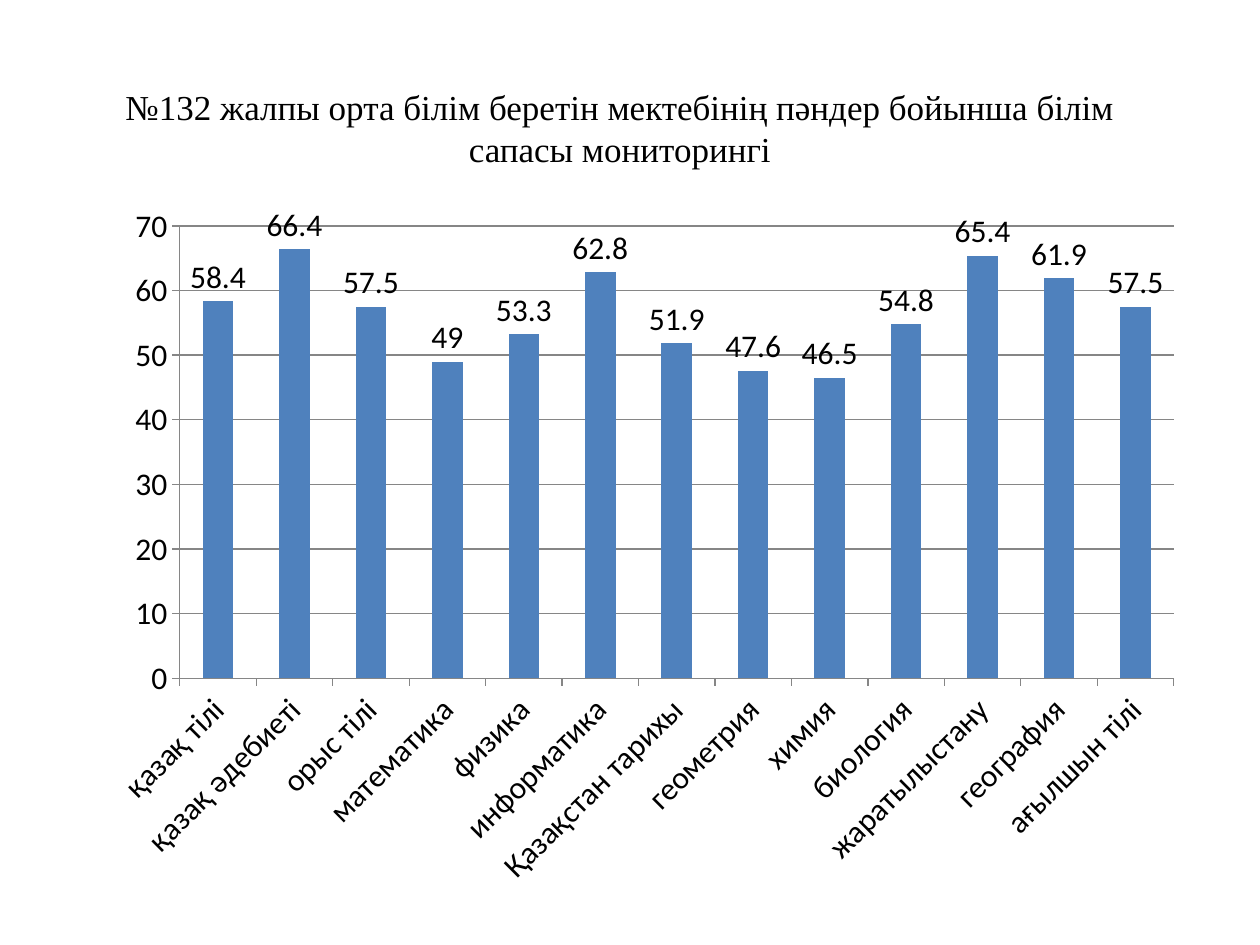
from pptx import Presentation
from pptx.chart.data import CategoryChartData as ChartData
from pptx.dml.color import RGBColor
from pptx.enum.chart import XL_CHART_TYPE as Kind, XL_LABEL_POSITION as Pos
from pptx.enum.chart import XL_TICK_MARK as Tick
from pptx.enum.text import MSO_ANCHOR as Anchor, PP_ALIGN as Align
from pptx.util import Inches, Pt

# Content
TITLE = "№132 жалпы орта білім беретін мектебінің пәндер бойынша білім сапасы мониторингі"
SCORES = [
    ("қазақ тілі", 58.4),
    ("қазақ әдебиеті", 66.4),
    ("орыс тілі", 57.5),
    ("математика", 49),
    ("физика", 53.3),
    ("информатика", 62.8),
    ("Қазақстан тарихы", 51.9),
    ("геометрия", 47.6),
    ("химия", 46.5),
    ("биология", 54.8),
    ("жаратылыстану", 65.4),
    ("география", 61.9),
    ("ағылшын тілі", 57.5),
]

BLACK = RGBColor(0x00, 0x00, 0x00)
BLUE = RGBColor(0x4F, 0x81, 0xBD)
GRAY = RGBColor(0x86, 0x86, 0x86)


def style(font, size, name, color=BLACK):
    font.size, font.name, font.bold = Pt(size), name, False
    font.color.rgb = color


def put_text(shape, text, size=20, name="Times New Roman", align=Align.CENTER):
    frame = shape.text_frame
    frame.word_wrap = True
    frame.vertical_anchor = Anchor.MIDDLE
    para = frame.paragraphs[0]
    para.alignment = align
    run = para.add_run()
    run.text = text
    style(run.font, size, name)


def add_scores(slide):
    data = ChartData()
    data.categories = [name for name, _ in SCORES]
    data.add_series("Series 1", [score for _, score in SCORES])
    box = [Inches(n) for n in (0.75, 1.53, 8.74, 5.61)]
    chart = slide.shapes.add_chart(Kind.COLUMN_CLUSTERED, *box, data).chart
    chart.has_legend = chart.has_title = False
    style(chart.font, 18, "Calibri")

    # Columns and their labels
    plot = chart.plots[0]
    plot.gap_width = 150
    plot.vary_by_categories = False
    fill = plot.series[0].format.fill
    fill.solid()
    fill.fore_color.rgb = BLUE
    plot.has_data_labels = True
    plot.data_labels.show_value = True
    plot.data_labels.position = Pos.OUTSIDE_END

    # Axes and grid
    values = chart.value_axis
    values.minimum_scale, values.maximum_scale, values.major_unit = 0, 70, 10
    values.has_major_gridlines = True
    for axis in (chart.category_axis, values):
        axis.major_tick_mark = Tick.OUTSIDE
        axis.minor_tick_mark = Tick.NONE
    for part in (chart.category_axis, values, values.major_gridlines):
        part.format.line.color.rgb = GRAY
        part.format.line.width = Pt(0.75)


def main():
    deck = Presentation()
    deck.slide_width, deck.slide_height = Inches(10), Inches(7.5)
    slide = deck.slides.add_slide(deck.slide_layouts[5])

    # Title
    title = slide.shapes.title
    title.left, title.top = Inches(0.67), Inches(0.21)
    title.width, title.height = Inches(8.5), Inches(1.61)
    put_text(title, TITLE)

    # Chart
    add_scores(slide)
    deck.save("out.pptx")


if __name__ == "__main__":
    main()
